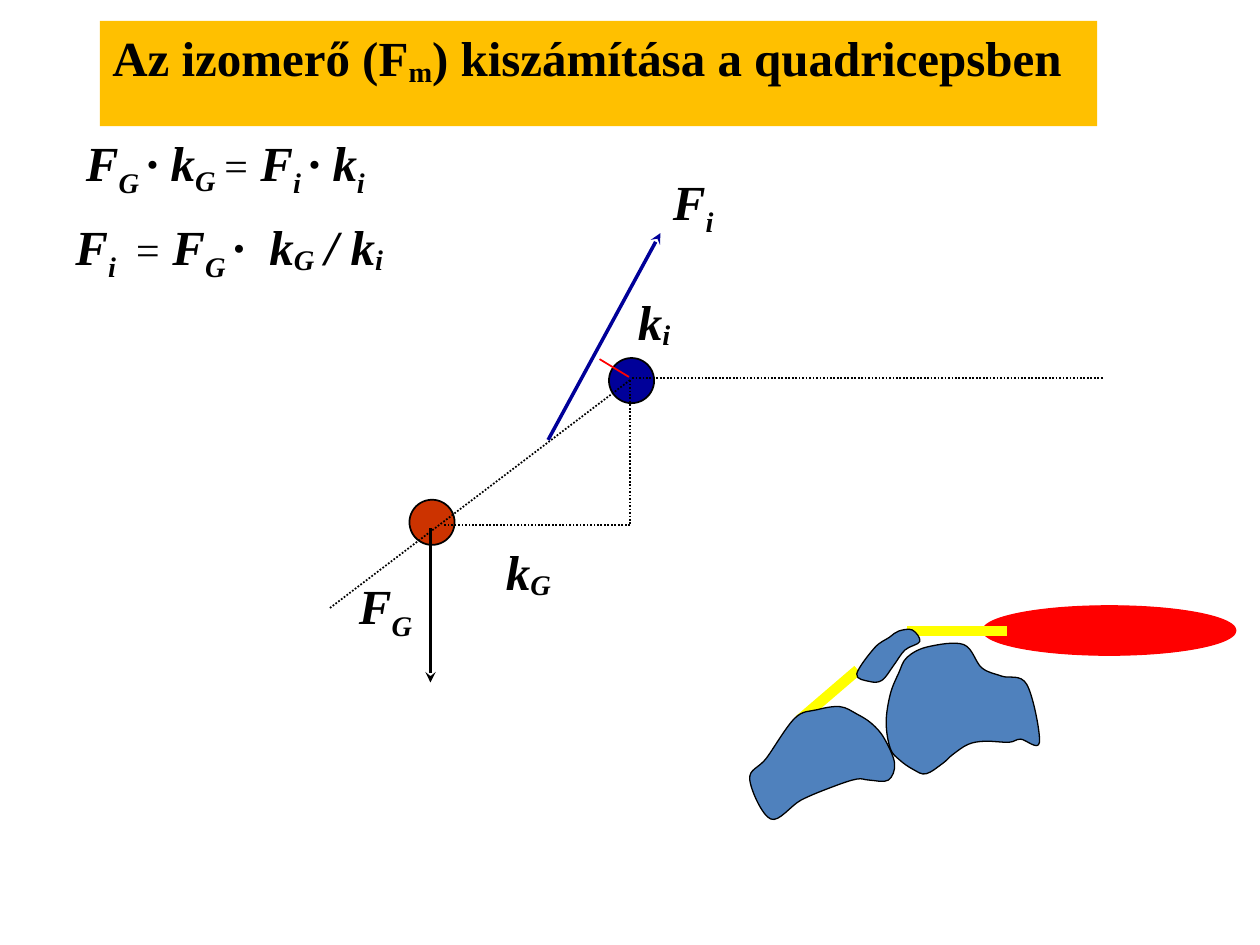
from lxml.etree import SubElement
from pptx import Presentation
from pptx.dml.color import RGBColor
from pptx.enum.dml import MSO_LINE
from pptx.enum.shapes import MSO_CONNECTOR, MSO_SHAPE
from pptx.enum.text import MSO_ANCHOR, MSO_AUTO_SIZE, PP_ALIGN
from pptx.oxml.ns import qn
from pptx.util import Inches, Pt

# The slide is a grid of 120 columns by 90 rows
CELL = Inches(10) / 120
THEME = {
    "font": "Times New Roman", "size": 28, "small": 24,
    "text": "000000", "banner": "FFC000", "force": "000099", "weight": "CC3300",
    "muscle": "FF0000", "tendon": "FFFF00", "bone": "4F81BD",
}
COLOR = {name: RGBColor.from_string(value)
         for name, value in THEME.items() if name not in ("font", "size", "small")}
TEXT_HEIGHT = 6.8

deck = Presentation()
deck.slide_width, deck.slide_height = round(120 * CELL), round(90 * CELL)
page = deck.slides.add_slide(deck.slide_layouts[5])


def write_text(box, spans, italic=True, align=PP_ALIGN.LEFT):
    """Write spans of (text, baseline percent, "small" for light text)."""
    frame = box.text_frame
    frame.word_wrap = True
    frame.auto_size = MSO_AUTO_SIZE.SHAPE_TO_FIT_TEXT
    frame.vertical_anchor = MSO_ANCHOR.TOP
    para = frame.paragraphs[0]
    para.alignment = align
    before = SubElement(para._p.get_or_add_pPr(), qn("a:spcBef"))
    SubElement(before, qn("a:spcPct")).set("val", "50000")
    for text, baseline, *style in spans:
        span = para.add_run()
        span.text = text
        font = span.font
        font.name = THEME["font"]
        font.size = Pt(THEME["small" if style else "size"])
        font.bold = not style
        font.italic = italic
        font.color.rgb = COLOR["text"]
        if baseline:
            span._r.get_or_add_rPr().set("baseline", str(baseline * 1000))


def draw_line(start, end, color="text", width=1, dotted=False, arrow=False):
    ends = [round(value * CELL) for value in (*start, *end)]
    line = page.shapes.add_connector(MSO_CONNECTOR.STRAIGHT, *ends)
    line.line.color.rgb = COLOR[color]
    line.line.width = Pt(width)
    if dotted:
        line.line.dash_style = MSO_LINE.ROUND_DOT
    if arrow:
        SubElement(line.line._get_or_add_ln(), qn("a:tailEnd")).set("type", "stealth")
    SubElement(line._element.spPr, qn("a:effectLst"))


# Title banner
title = page.shapes.title
title.left, title.top, title.width, title.height = (
    round(value * CELL) for value in (9.5, 2, 95, TEXT_HEIGHT))
title.fill.solid()
title.fill.fore_color.rgb = COLOR["banner"]
write_text(title, [("Az izomerő (F", 0), ("m", -12),
                   (") kiszámítása a quadricepsben", 0)], italic=False)

# Centre of gravity, knee joint and thigh muscle
ovals = [
    (39, 47.6, 4.3, 4.3, "weight", "text", 1),
    (58, 34.1, 4.3, 4.3, "force", "text", 1),
    (93.6, 57.7, 24.1, 4.7, "muscle", "muscle", 0.75),
]
for *place, fill, outline, width in ovals:
    oval = page.shapes.add_shape(MSO_SHAPE.OVAL, *(round(value * CELL) for value in place))
    oval.shadow.inherit = False
    oval.fill.solid()
    oval.fill.fore_color.rgb = COLOR[fill]
    oval.line.color.rgb = COLOR[outline]
    oval.line.width = Pt(width)

# Limb axes and lever arms
knee, corner = (60, 36.2), (60, 50)
draw_line(knee, (31.3, 58), dotted=True)
draw_line((60.2, 36), (105, 36), dotted=True)
draw_line(corner, (42.2, 50), dotted=True)
draw_line(knee, corner, dotted=True)
draw_line((59.9, 35.9), (57.1, 34.2), color="muscle")

# Forces
draw_line((41, 50.3), (41, 65), width=2, arrow=True)
draw_line((52.2, 41.9), (62.9, 22.2), color="force", width=2, arrow=True)

# Labels and equations: left, top, width, alignment, spans
texts = [
    (33, 54.2, 8, PP_ALIGN.LEFT, [("F", 0), ("G", -25)]),
    (47, 51, 12, PP_ALIGN.LEFT, [("k", 0), ("G", -10)]),
    (62.9, 15.7, 8, PP_ALIGN.LEFT, [("F", 0), ("i", -25)]),
    (57, 27.2, 10.6, PP_ALIGN.CENTER, [("k", 0), ("i", -10)]),
    (6, 12, 35, PP_ALIGN.LEFT, [
        (" ", 0, "small"), ("F", 0), ("G ", -25), ("· k", 0), ("G", -20),
        (" ", -20, "small"), ("= ", 0, "small"), ("F", 0), ("i ", -25),
        ("· k", 0), ("i", -25)]),
    (5, 20, 39, PP_ALIGN.LEFT, [
        (" ", 0, "small"), ("F", 0), ("i ", -25), (" = ", 0, "small"),
        ("F", 0), ("G ", -25), ("·  k", 0), ("G", -10), (" ", 0, "small"),
        ("/ k", 0), ("i", -10)]),
]
for left, top, width, align, spans in texts:
    box = page.shapes.add_textbox(
        *(round(value * CELL) for value in (left, top, width, TEXT_HEIGHT)))
    write_text(box, spans, align=align)

# Tendons
draw_line((86.4, 60.1), (95.9, 60.1), color="tendon", width=6)
draw_line((76.1, 68.6), (81.7, 63.8), color="tendon", width=6)

# Bones: points on each closed outline
femur = [
    (97.8, 65.2), (95.4, 64.4), (93.5, 63.6), (91.8, 61.4), (88.4, 61.6),
    (86.4, 62.6), (85.6, 64.1), (84.8, 66.1), (84.4, 68.8), (84.8, 71.3),
    (85.7, 72.4), (87, 73.3), (88.2, 73.7), (89.8, 72.7), (90.7, 71.9),
    (92.2, 70.9), (93.8, 70.6), (96.1, 70.7), (97.2, 70.4), (99, 70.7)]
tibia = [
    (73.4, 78), (76.3, 76.2), (79.4, 74.9), (81.6, 74.2), (82.8, 74.3),
    (84.6, 74.3), (85.2, 72.7), (84.2, 70.3), (83, 68.9), (81.6, 68),
    (80, 67.3), (77.8, 67.6), (75.7, 68.4), (73, 72.2), (71.4, 74.2)]
patella = [
    (86.9, 60), (87.6, 61.1), (86.2, 61.9), (85.1, 63.4), (84, 64.8),
    (82.8, 64.9), (81.6, 64.2), (83.3, 61.7), (84.7, 60.7), (85.6, 60.1)]
for points in (femur, tibia, patella):
    outline = [(round(x * CELL), round(y * CELL)) for x, y in points]
    builder = page.shapes.build_freeform(*outline[0])
    builder.add_line_segments(outline[1:] + outline[:1], close=True)
    bone = builder.convert_to_shape()
    bone.shadow.inherit = False
    bone.fill.solid()
    bone.fill.fore_color.rgb = COLOR["bone"]
    bone.line.color.rgb = COLOR["text"]
    bone.line.width = Pt(0.75)

    # Turn each segment into a curve that runs smoothly through its neighbours
    count = len(outline)
    for index, segment in enumerate(list(bone._element.iter(qn("a:lnTo")))):
        before, start, end, after = (outline[(index + step) % count] for step in (-1, 0, 1, 2))
        segment.tag = qn("a:cubicBezTo")
        target = segment[0]
        controls = [[s + (e - b) / 6 for b, s, e in zip(before, start, end)],
                    [e - (a - s) / 6 for s, e, a in zip(start, end, after)]]
        for x, y in controls:
            control = SubElement(segment, qn("a:pt"))
            control.set("x", str(round(x - bone.left)))
            control.set("y", str(round(y - bone.top)))
        segment.append(target)

deck.save("out.pptx")
